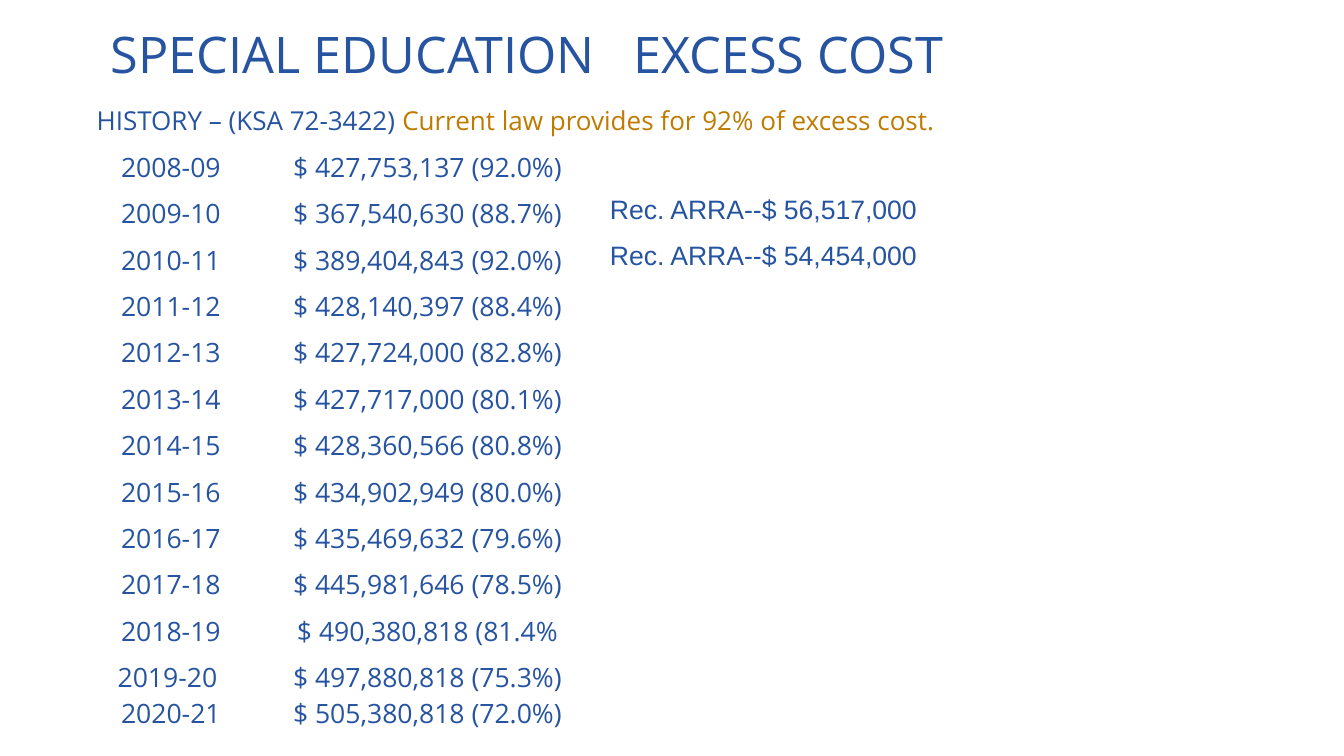
from pptx import Presentation
from pptx.dml.color import RGBColor
from pptx.enum.text import MSO_ANCHOR, PP_ALIGN
from pptx.oxml import parse_xml
from pptx.oxml.ns import nsdecls
from pptx.util import Inches, Pt

LEFT, CENTER = PP_ALIGN.LEFT, PP_ALIGN.CENTER
MIDDLE = MSO_ANCHOR.MIDDLE
BLUE = RGBColor(0x26, 0x54, 0xA0)
GOLD = RGBColor(0xBF, 0x7B, 0x00)
MAIN_FONT, NOTE_FONT = "Open Sans", "Arial"

# Content
TITLE = "SPECIAL EDUCATION\tEXCESS COST"
HISTORY = [
    ("HISTORY – (KSA 72-3422) ", BLUE),
    ("Current law provides for 92% of excess cost.", GOLD),
]
# Year, excess cost (share paid), recovery funds; the last row holds two years
COST_ROWS = [
    ("2008-09", "$ 427,753,137 (92.0%)", ""),
    ("2009-10", "$ 367,540,630 (88.7%)", "Rec. ARRA--$ 56,517,000"),
    ("2010-11", "$ 389,404,843 (92.0%)", "Rec. ARRA--$ 54,454,000"),
    ("2011-12", "$ 428,140,397 (88.4%)", ""),
    ("2012-13", "$ 427,724,000 (82.8%)", ""),
    ("2013-14", "$ 427,717,000 (80.1%)", ""),
    ("2014-15", "$ 428,360,566 (80.8%)", ""),
    ("2015-16", "$ 434,902,949 (80.0%)", ""),
    ("2016-17", "$ 435,469,632 (79.6%)", ""),
    ("2017-18", "$ 445,981,646 (78.5%)", ""),
    ("2018-19", "$ 490,380,818 (81.4%", ""),
    ("2019-20 \n2020-21", "$ 497,880,818 (75.3%)\n$ 505,380,818 (72.0%)", ""),
]
COLUMNS = [  # width, alignment, font
    (1.67, CENTER, MAIN_FONT),
    (3.42, CENTER, MAIN_FONT),
    (3.58, LEFT, NOTE_FONT),
]
TABLE_TOP, TABLE_HEIGHT = 1.43, 5.88
ROW_HEIGHT = 0.46
LAST_ROW_HEIGHT = TABLE_HEIGHT - ROW_HEIGHT * (len(COST_ROWS) - 1)
TITLE_TAB = 5.18


def set_font(font, name, size, color):
    font.name, font.size = name, Pt(size)
    font.color.rgb = color


prs = Presentation()
prs.slide_width, prs.slide_height = Inches(13.33), Inches(7.5)
slide = prs.slides.add_slide(prs.slide_layouts[5])

# Title, its two parts set apart by a tab stop
title = slide.shapes.title
title.left, title.top = Inches(1), Inches(0.21)
title.width, title.height = Inches(10.78), Inches(0.71)
title.text_frame.text = TITLE
title.text_frame.vertical_anchor = MIDDLE
heading = title.text_frame.paragraphs[0]
heading.alignment = LEFT
heading.line_spacing = 0.9
heading._p.get_or_add_pPr().append(parse_xml(
    f'<a:tabLst {nsdecls("a")}><a:tab pos="{Inches(TITLE_TAB)}" algn="l"/></a:tabLst>'))
set_font(heading.font, MAIN_FONT, 36, BLUE)

# History line
history_box = slide.shapes.add_textbox(
    Inches(0.86), Inches(1.02), Inches(8.95), Inches(0.41))
history_box.text_frame.word_wrap = True
history = history_box.text_frame.paragraphs[0]
history.line_spacing = 0.9
for text, color in HISTORY:
    run = history.add_run()
    run.text = text
    set_font(run.font, MAIN_FONT, 18.6, color)

# Cost table
table_width = sum(width for width, _, _ in COLUMNS)
cost_table = slide.shapes.add_table(
    len(COST_ROWS), len(COLUMNS), Inches(0.86), Inches(TABLE_TOP),
    Inches(table_width), Inches(TABLE_HEIGHT)).table
cost_table.first_row = cost_table.horz_banding = False
for column, (width, _, _) in zip(cost_table.columns, COLUMNS):
    column.width = Inches(width)
for row, texts in zip(cost_table.rows, COST_ROWS):
    row.height = Inches(ROW_HEIGHT)
    for cell, text, (_, alignment, font_name) in zip(row.cells, texts, COLUMNS):
        cell.fill.background()
        cell.text = text
        for paragraph in cell.text_frame.paragraphs:
            paragraph.alignment = alignment
            set_font(paragraph.font, font_name, 19, BLUE)
cost_table.rows[len(COST_ROWS) - 1].height = Inches(LAST_ROW_HEIGHT)

prs.save("out.pptx")
